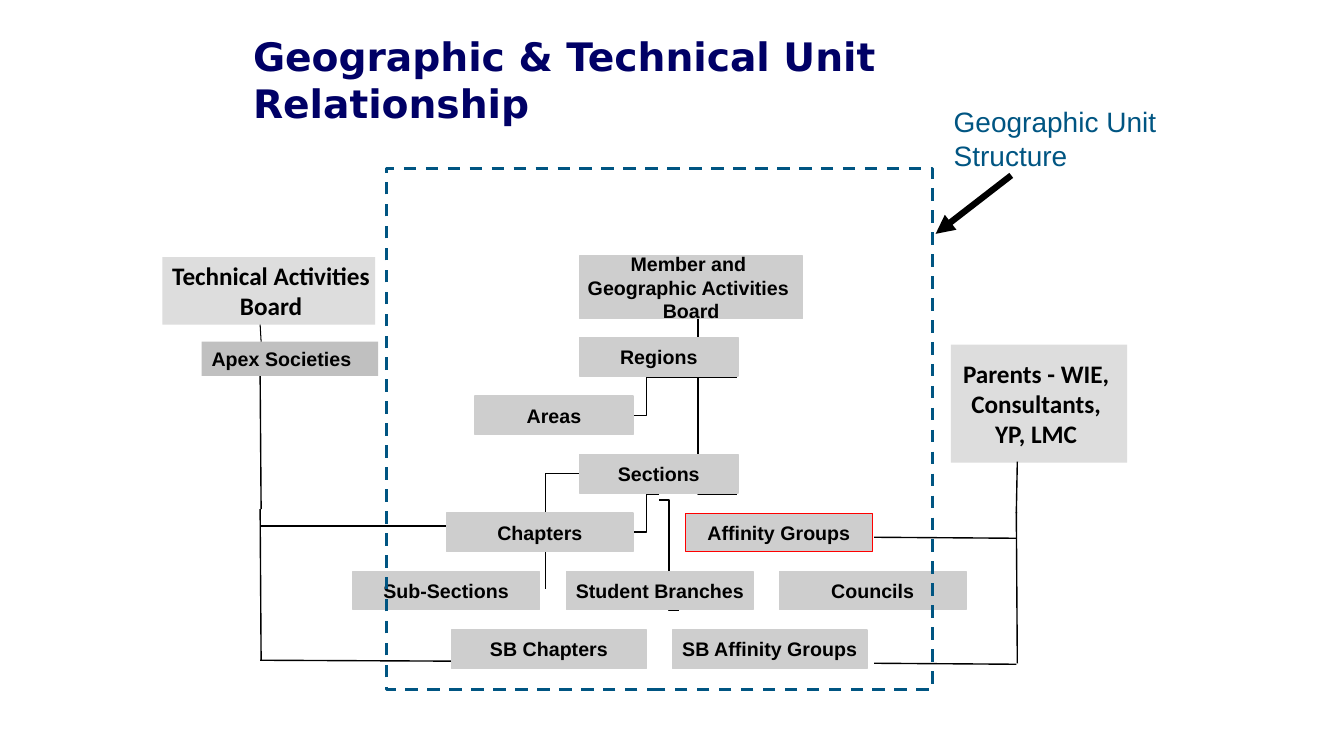
from lxml.etree import SubElement
from pptx import Presentation
from pptx.dml.color import RGBColor
from pptx.enum.dml import MSO_LINE as Dash
from pptx.enum.shapes import MSO_CONNECTOR as Link, MSO_SHAPE as Shape
from pptx.enum.text import MSO_ANCHOR as Anchor, MSO_AUTO_SIZE as Fit, PP_ALIGN as Align
from pptx.oxml.ns import qn
from pptx.util import Inches, Pt

HUES = {"navy": "000066", "blue": "005582", "black": "000000", "red": "FF0000",
        "pale": "DDDDDD", "gray": "C0C0C0", "unit": "CECECE"}
ROW, STEP, TALL = 3.35, 0.58, 0.38
UNITS = [
    (0, 5.75, 1.57, "Regions"),
    (1, 4.71, 1.57, "Areas"),
    (2, 5.75, 1.57, "Sections"),
    (3, 4.43, 1.85, "Chapters"),
    (3, 6.8, 1.85, "Affinity Groups"),
    (4, 3.5, 1.85, "Sub-Sections"),
    (4, 5.62, 1.85, "Student Branches"),
    (4, 7.73, 1.85, "Councils"),
    (5, 4.48, 1.93, "SB Chapters"),
    (5, 6.67, 1.93, "SB Affinity Groups"),
]
ELBOWS = [
    (6.73, 6.06, 6.54, 4.96),
    (7.31, 4.9, 6.54, 2.78),
    (6.28, 5.28, 6.54, 4.9),
    (6.28, 4.12, 6.54, 3.74),
]
LINES = [
    (8.67, 5.33, 10.08, 5.34),
    (10.08, 5.09, 10.09, 4.58),
    (2.58, 3.72, 2.59, 5.05),
    (2.58, 5.22, 4.58, 5.22),
    (2.58, 5.05, 2.59, 6.55),
    (2.58, 6.55, 4.67, 6.56),
    (10.08, 5.08, 10.09, 6.58),
    (8.67, 6.58, 10.08, 6.59),
    (6.54, 3.74, 7.31, 3.74),
]


def hue(name):
    """Return the colour of a given name."""
    return RGBColor.from_string(HUES[name])


class Chart:
    """Draws the parts of a unit chart on one slide."""

    def __init__(self, deck):
        """Add a title-only slide to the deck."""
        self.slide = deck.slides.add_slide(deck.slide_layouts[5])
        self.shapes = self.slide.shapes

    def letter(self, frame, lines, size, font="Arial", color="black", bold=True,
               align=Align.CENTER):
        """Fill a text frame with one paragraph for each line."""
        frame.text = "\n".join(lines)
        for para in frame.paragraphs:
            para.alignment = align
            para.font.size, para.font.name, para.font.bold = Pt(size), font, bold
            para.font.color.rgb = hue(color)

    def title(self, text, *area):
        """Place and style the title."""
        head = self.shapes.title
        head.left, head.top, head.width, head.height = map(Inches, area)
        frame = head.text_frame
        frame.auto_size, frame.vertical_anchor = Fit.NONE, Anchor.MIDDLE
        self.letter(frame, [text], 28, "DejaVu Sans", "navy", align=Align.LEFT)

    def label(self, text, *area):
        """Add a plain text box."""
        frame = self.shapes.add_textbox(*map(Inches, area)).text_frame
        frame.word_wrap = True
        self.letter(frame, [text], 20, color="blue", bold=False, align=Align.LEFT)

    def box(self, area, fill=None, edge=None, width=1):
        """Add a rectangle and return it."""
        box = self.shapes.add_shape(Shape.RECTANGLE, *map(Inches, area))
        box.shadow.inherit = False
        if fill:
            box.fill.solid()
            box.fill.fore_color.rgb = hue(fill)
        else:
            box.fill.background()
        if edge:
            box.line.color.rgb, box.line.width = hue(edge), Pt(width)
        else:
            box.line.fill.background()
        return box

    def board(self, lines, *area):
        """Add a pale box for a parent body."""
        frame = self.box(area, "pale").text_frame
        frame.word_wrap, frame.vertical_anchor = False, Anchor.MIDDLE
        self.letter(frame, lines, 18, "Calibri")
        return frame

    def unit(self, lines, area, edge="unit", width=1):
        """Add a gray box for a geographic unit."""
        frame = self.box(area, "unit", edge, width).text_frame
        frame.word_wrap, frame.vertical_anchor = False, Anchor.MIDDLE
        frame.margin_left = frame.margin_right = Inches(0.07)
        frame.margin_top = frame.margin_bottom = Inches(0.04)
        self.letter(frame, lines, 14)

    def line(self, ends, kind=Link.STRAIGHT, width=1, arrow=False):
        """Add a black connector and return it."""
        line = self.shapes.add_connector(kind, *map(Inches, ends))
        line.line.color.rgb, line.line.width = hue("black"), Pt(width)
        props = line._element.spPr
        if arrow:
            SubElement(props.find(qn("a:ln")), qn("a:tailEnd"), type="triangle")
        SubElement(props, qn("a:effectLst"))
        return line


def main():
    """Build and save the slide."""
    deck = Presentation()
    deck.slide_width, deck.slide_height = Inches(13.33), Inches(7.5)
    chart = Chart(deck)
    chart.title("Geographic & Technical Unit Relationship", 2.41, 0.27, 8.5, 1.03)
    tech = chart.board(["Technical Activities", "Board"], 1.61, 2.55, 2.11, 0.67)
    tech.paragraphs[0].alignment = Align.LEFT
    chart.board(["Parents - WIE, ", "Consultants, ", "YP, LMC "], 9.43, 3.42, 1.75, 1.17)
    for ends in LINES:
        chart.line(ends)

    group = chart.box((2, 3.39, 1.75, 0.34), "gray").text_frame
    group.word_wrap, group.vertical_anchor = True, Anchor.TOP
    chart.letter(group, ["Apex Societies"], 14, align=Align.LEFT)

    for ends in ELBOWS:
        chart.line(ends, Link.ELBOW)
    bend = chart.line((5.76, 4.7, 5.41, 5.84), Link.ELBOW)
    bend._element.spPr.find(qn("a:prstGeom")).set("prst", "bentConnector2")

    chart.unit(["Member and ", "Geographic Activities \vBoard"], (5.75, 2.54, 2.21, 0.62))
    for row, left, wide, name in UNITS:
        edge = ("red", 0.75) if name == "Affinity Groups" else ("unit", 1)
        chart.unit([name], (left, ROW + row * STEP, wide, TALL), *edge)

    chart.line((2.58, 3.22, 2.59, 3.39), width=0.75)
    scope = chart.box((3.83, 1.67, 5.42, 5.17), edge="blue", width=2.25)
    scope.line.dash_style = Dash.DASH
    chart.label("Geographic Unit Structure", 9.36, 0.99, 2.42, 0.77)
    chart.line((10.03, 1.74, 9.28, 2.32), width=4.5, arrow=True)
    deck.save("out.pptx")


if __name__ == "__main__":
    main()
